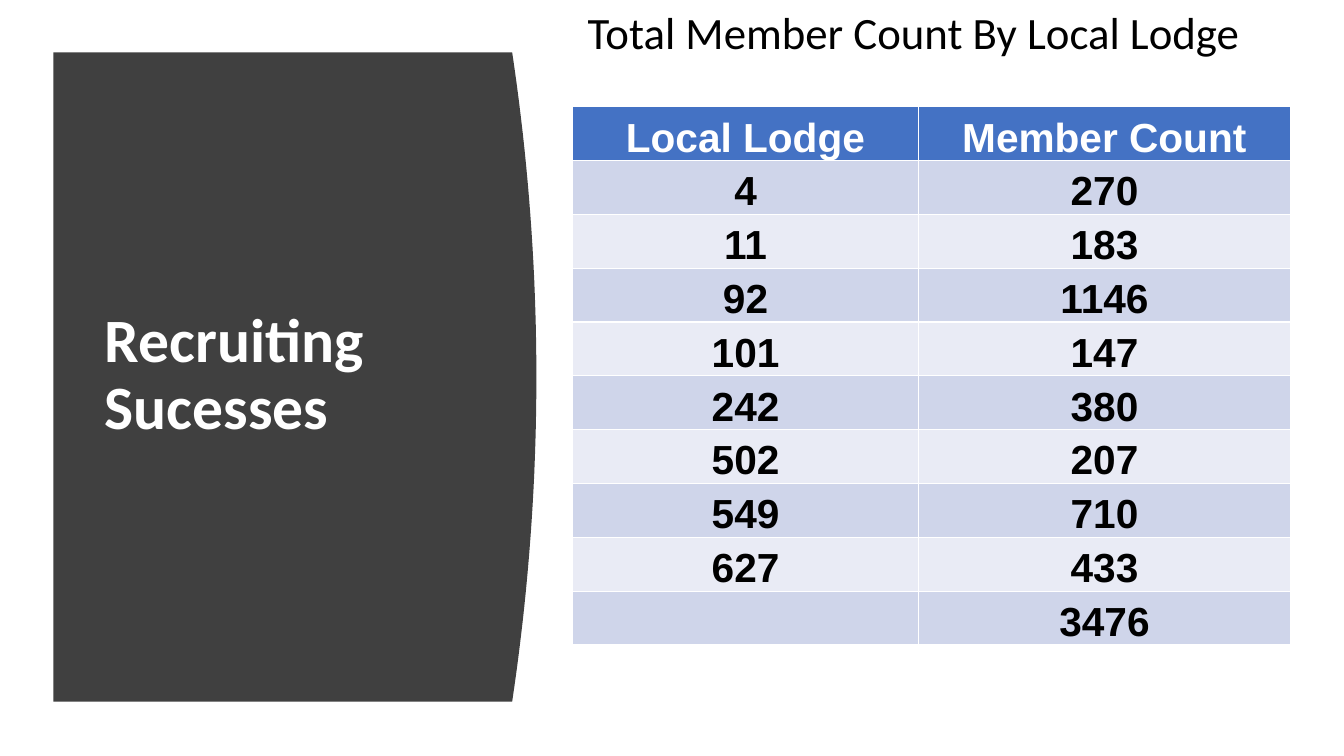
from pptx import Presentation
from pptx.dml.color import RGBColor as RGB
from pptx.enum.text import MSO_ANCHOR as Anchor, MSO_AUTO_SIZE as Fit, PP_ALIGN as Align
from pptx.util import Pt

PX = 9144  # 100 px to the inch
COLORS = {"panel": "404040", "head": "4472C4", "odd": "CFD5EA",
          "even": "E9EBF5", "white": "FFFFFF", "black": "000000"}


def place(shape, *box):
    for name, size in zip(("left", "top", "width", "height"), box):
        setattr(shape, name, size * PX)


def write(frame, text, color, align=Align.LEFT, **style):
    """Fill the frame with one paragraph; style holds font values."""
    frame.text = text
    para = frame.paragraphs[0]
    para.alignment = align
    font = para.runs[0].font
    for name, value in style.items():
        setattr(font, name, value)
    font.color.rgb = RGB.from_string(COLORS[color])


deck = Presentation()
deck.slide_width, deck.slide_height = 1333 * PX, 750 * PX
slide = deck.slides.add_slide(deck.slide_layouts[5])
shapes = slide.shapes
title = shapes.title

# Dark panel with a bowed right edge
left, top, side, base, bulge, steps = 53, 52, 508, 696, 24, 40
curve = []
for i in range(steps + 1):
    t = 2 * i / steps - 1
    curve.append(((side + bulge * (1 - t * t)) * PX,
                  (top + (base - top) * i / steps) * PX))
pen = shapes.build_freeform(left * PX, top * PX)
pen.add_line_segments(curve + [(left * PX, base * PX)], close=True)
panel = pen.convert_to_shape()
panel.shadow.inherit = False
panel.fill.solid()
panel.fill.fore_color.rgb = RGB.from_string(COLORS["panel"])
panel.line.fill.background()
title._element.addprevious(panel._element)

# Title
place(title, 94, 111, 374, 524)
frame = title.text_frame
write(frame, "Recruiting Sucesses", "white", name="Calibri", size=Pt(44), bold=True)
for name, value in {"word_wrap": True, "auto_size": Fit.NONE,
                    "vertical_anchor": Anchor.MIDDLE}.items():
    setattr(frame, name, value)
frame.paragraphs[0].line_spacing = 0.9

# Member table
rows = [("Local Lodge", "Member Count"), ("4", "270"), ("11", "183"),
        ("92", "1146"), ("101", "147"), ("242", "380"), ("502", "207"),
        ("549", "710"), ("627", "433"), ("", "3476")]
holder = shapes.add_table(len(rows), 2, 568 * PX, 106 * PX, 712 * PX, 534 * PX)
table = holder.table
for col, width in zip(table.columns, (343, 369)):
    col.width = width * PX
cell_style = {"margin_left": PX, "margin_right": PX, "margin_top": PX,
              "margin_bottom": 0, "vertical_anchor": Anchor.BOTTOM}
for r, row in enumerate(rows):
    shade = "head" if r == 0 else "odd" if r % 2 else "even"
    for c, text in enumerate(row):
        cell = table.cell(r, c)
        for name, value in cell_style.items():
            setattr(cell, name, value)
        cell.fill.solid()
        cell.fill.fore_color.rgb = RGB.from_string(COLORS[shade])
        if text:
            write(cell.text_frame, text, "black" if r else "white", Align.CENTER,
                  name="Arial", size=Pt(29), bold=True)

# Table heading
label = shapes.add_textbox(573 * PX, 0, 707 * PX, 64 * PX)
label.text_frame.word_wrap = True
write(label.text_frame, "Total Member Count By Local Lodge", "black",
      name="Calibri", size=Pt(32))

deck.save("out.pptx")
